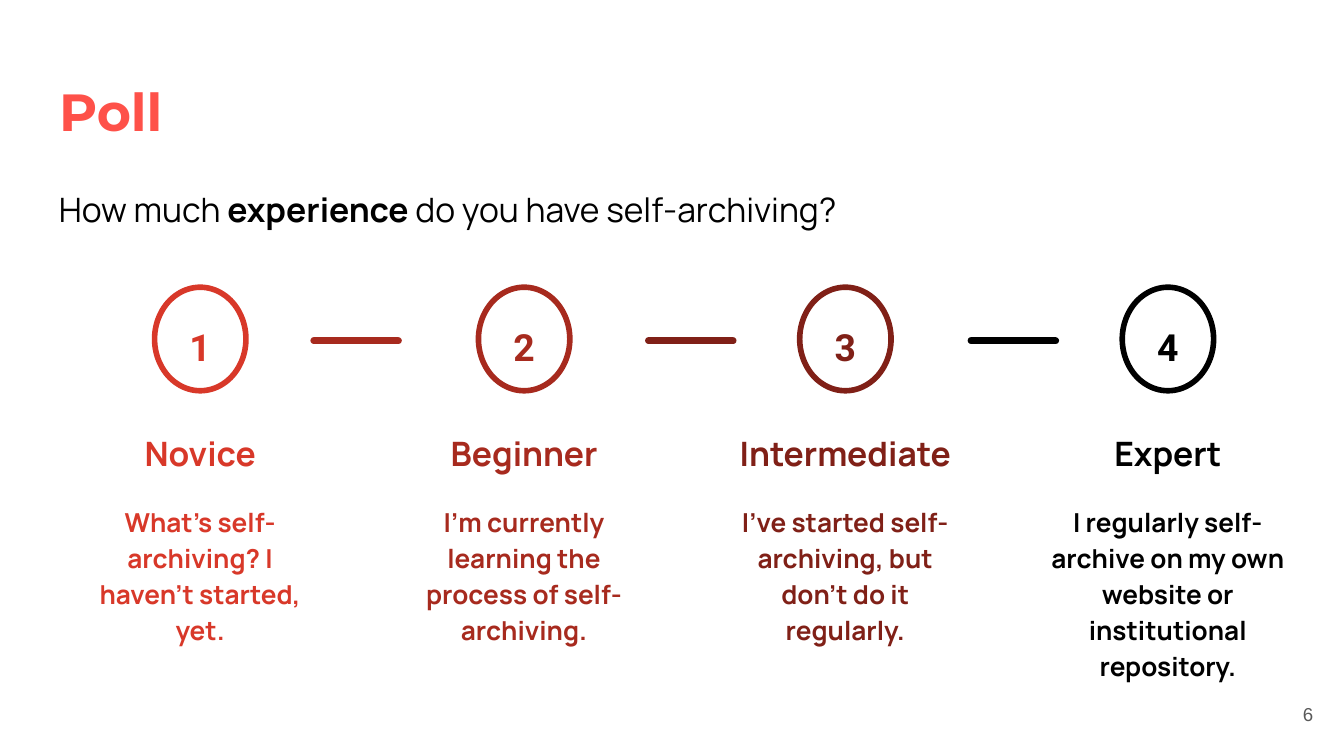
from pptx import Presentation
from pptx.dml.color import RGBColor
from pptx.enum.shapes import MSO_SHAPE
from pptx.enum.text import MSO_ANCHOR, PP_ALIGN
from pptx.util import Inches, Pt

deck = Presentation()
deck.slide_width = Inches(10)
deck.slide_height = deck.slide_width * 9 // 16
slide = deck.slides.add_slide(deck.slide_layouts[5])
shapes = slide.shapes


def area(x, y, w, h):
    """Turn percent of the slide's width and height into lengths."""
    wide, high = deck.slide_width / 100, deck.slide_height / 100
    return [int(n) for n in (x * wide, y * high, w * wide, h * high)]


def write(box, runs, face, size, hue, align=PP_ALIGN.LEFT,
          anchor=MSO_ANCHOR.TOP, space=1.0):
    """Fill a box with one paragraph of (text, bold) runs."""
    frame = box.text_frame
    inset = Inches(0.1)
    look = {"word_wrap": True, "vertical_anchor": anchor,
            "margin_left": inset, "margin_right": inset,
            "margin_top": inset, "margin_bottom": inset}
    for key, value in look.items():
        setattr(frame, key, value)
    para = frame.paragraphs[0]
    para.alignment, para.line_spacing = align, space
    for text, bold in runs:
        run = para.add_run()
        run.text = text
        style = {"name": face, "size": Pt(size), "bold": bold}
        for key, value in style.items():
            setattr(run.font, key, value)
        run.font.color.rgb = RGBColor.from_string(hue)


title = shapes.title
title.left, title.top, title.width, title.height = area(3.4, 8.7, 83.1, 11.2)
write(title, [("Poll", True)], "Montserrat", 28, "FE5149")

query = shapes.add_textbox(*area(3.4, 22.4, 93.3, 10.1))
write(query, [("How much ", False), ("experience", True),
              (" do you have self-archiving?", False)],
      "Manrope", 18, "000000", space=1.15)

page = shapes.add_textbox(*area(92.7, 90.7, 6, 7.6))
write(page, [("6", False)], "Arial", 10, "595959",
      PP_ALIGN.RIGHT, MSO_ANCHOR.MIDDLE)

# Level, answer, colour, middle of the column, left edge of the bar before it
levels = [
    ("Novice", "What’s self-archiving? I haven’t started, yet.",
     "D83829", 14.9, None),
    ("Beginner", "I’m currently learning the process of self-archiving.",
     "A72A1E", 39, 23.1),
    ("Intermediate", "I’ve started self-archiving, but don’t do it regularly.",
     "802017", 62.9, 48),
    ("Expert", "I regularly self-archive on my own website or "
     "institutional repository.", "000000", 86.9, 72),
]

# Width, top, height, font, size, anchor
rows = [
    (5, 40.2, 7.3, "Roboto", 20, MSO_ANCHOR.TOP),
    (19.6, 54.1, 10.3, "Manrope", 18, MSO_ANCHOR.BOTTOM),
    (19.6, 64.6, 16.9, "Manrope", 14, MSO_ANCHOR.TOP),
]

for step, (level, answer, hue, mid, bar) in enumerate(levels, 1):
    ring = shapes.add_shape(MSO_SHAPE.OVAL, *area(mid - 3.4, 38, 6.8, 13.7))
    ring.shadow.inherit = False
    ring.fill.background()
    ring.line.color.rgb = RGBColor.from_string(hue)
    ring.line.width = Pt(3)

    if bar is not None:
        dash = shapes.add_shape(MSO_SHAPE.ROUNDED_RECTANGLE,
                                *area(bar, 44.6, 6.8, 0.9))
        dash.shadow.inherit = False
        dash.adjustments[0] = 0.5
        dash.fill.solid()
        dash.fill.fore_color.rgb = RGBColor.from_string(hue)
        dash.line.fill.background()

    for text, (w, y, h, face, size, anchor) in zip(
            (str(step), level, answer), rows):
        box = shapes.add_textbox(*area(mid - w / 2, y, w, h))
        write(box, [(text, True)], face, size, hue,
              PP_ALIGN.CENTER, anchor, 1.15)

deck.save("out.pptx")
